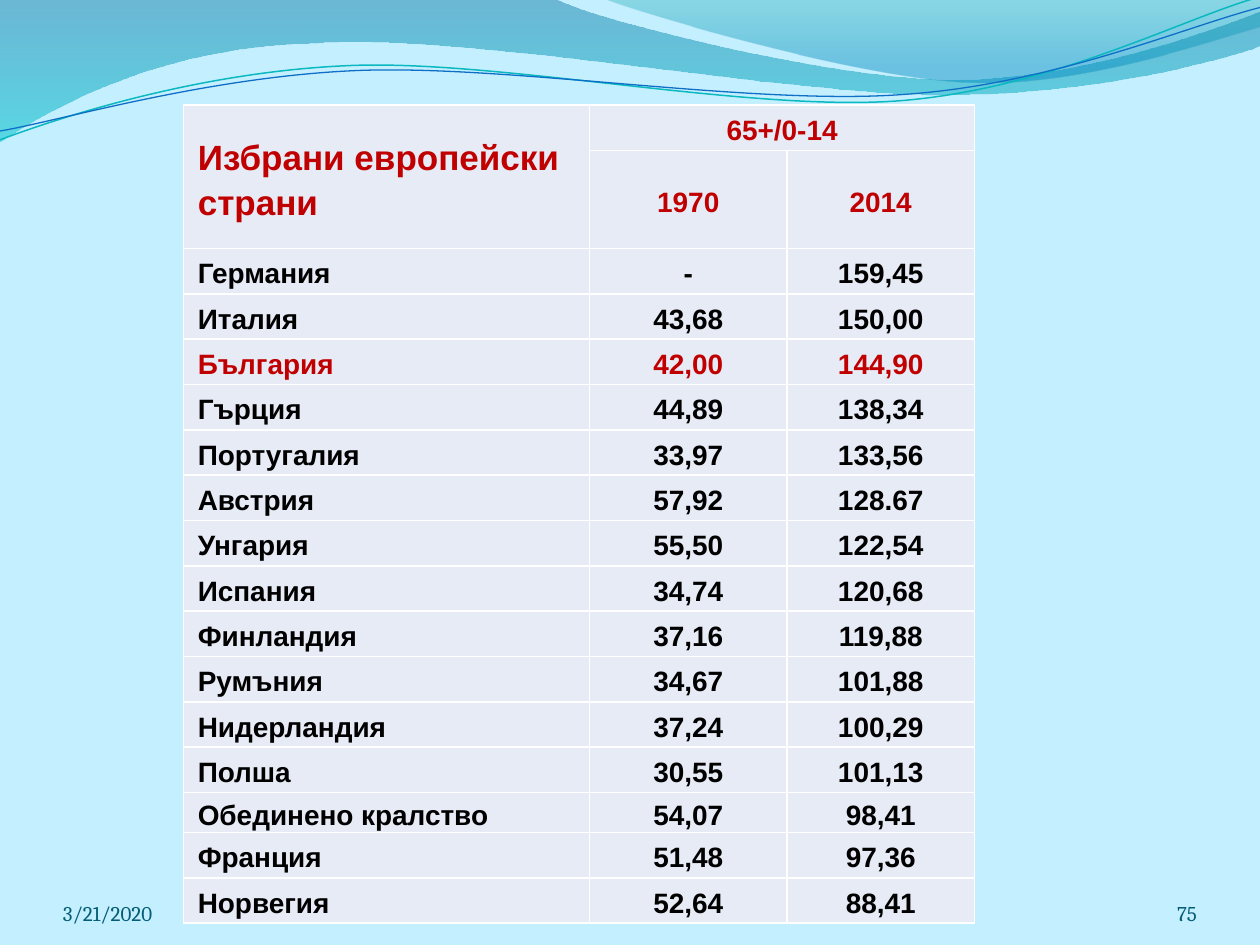
import pptx
import pptx.dml.color
import pptx.enum.text
import pptx.oxml
import pptx.oxml.ns
import pptx.util

RGBColor = pptx.dml.color.RGBColor
ALIGN = pptx.enum.text.PP_ALIGN
ANCHOR = pptx.enum.text.MSO_ANCHOR
Pt = pptx.util.Pt
qn = pptx.oxml.ns.qn
NS = pptx.oxml.ns.nsdecls("a")

SKY = RGBColor(0xC4, 0xEF, 0xFF)
DEEP_BLUE = RGBColor(0x00, 0x74, 0xA1)
AQUA = RGBColor(0x00, 0xC6, 0xCF)
TEAL = RGBColor(0x00, 0xA1, 0xA9)
BLUE = RGBColor(0x00, 0x8B, 0xBF)
LINE_TEAL = RGBColor(0x0A, 0xB8, 0xBF)
LINE_BLUE = RGBColor(0x0F, 0x6F, 0xC6)
FOOTER = RGBColor(0x04, 0x5D, 0x75)
CELL = RGBColor(0xE7, 0xEB, 0xF5)
RED = RGBColor(0xC0, 0x00, 0x00)
BLACK = RGBColor(0x00, 0x00, 0x00)

COLUMNS, ROWS = 100, 75
CURVE_TILT = 357.3

LEFT_WAVE = [
    [(0, 0)], [(44, -0.1)],
    [(47.6, 1.7), (66.4, 6.3), (75.8, 6.3)],
    [(85.3, 6.3), (95.8, 2.6), (100, 0.9)],
    [(100.1, 3.6)],
    [(98.3, 4.4), (87, 7.6), (74.6, 7.5)],
    [(62.2, 7.5), (38.2, 2.8), (25.7, 3.4)],
    [(12.9, 3.6), (4.6, 8.3), (-0.1, 11.3)],
    [(0, 0)],
]
RIGHT_WAVE = [
    [(47.9, -0.1)],
    [(50.9, 1.1), (68.2, 6.2), (76.9, 6.5)],
    [(85.6, 6.9), (96.1, 3.2), (100, 2.1)],
    [(100, 0)],
    [(47.9, -0.1)],
]
TEAL_LINE = [
    [(-0.2, 8.74)],
    [(4.68, 7.17), (15.84, 4.09), (27.75, 4.16)],
    [(39.56, 4.21), (59.14, 9.34), (71.17, 9.01)],
    [(83.2, 8.67), (93.95, 3.57), (100.03, 2.16)],
]
BLUE_LINE = [
    [(-0.16, 8.04)],
    [(4.58, 7.47), (16.43, 4.52), (28.34, 4.58)],
    [(40.35, 4.65), (59.57, 8.86), (71.6, 8.52)],
    [(83.53, 8.28), (94.23, 4.18), (100.19, 2.96)],
]

HIGHLIGHT = "България"
COUNTRIES = [
    ("Германия", "-", "159,45"),
    ("Италия", "43,68", "150,00"),
    (HIGHLIGHT, "42,00", "144,90"),
    ("Гърция", "44,89", "138,34"),
    ("Португалия", "33,97", "133,56"),
    ("Австрия", "57,92", "128.67"),
    ("Унгария", "55,50", "122,54"),
    ("Испания", "34,74", "120,68"),
    ("Финландия", "37,16", "119,88"),
    ("Румъния", "34,67", "101,88"),
    ("Нидерландия", "37,24", "100,29"),
    ("Полша", "30,55", "101,13"),
    ("Обединено кралство", "54,07", "98,41"),
    ("Франция", "51,48", "97,36"),
    ("Норвегия", "52,64", "88,41"),
]
HEADER = [("Избрани европейски страни", "65+/0-14", ""), ("", "1970", "2014")]


class Deck:
    """Holds the presentation, its grid and the current slide."""

    def __init__(self):
        self.prs = pptx.Presentation()
        self.prs.slide_width = pptx.util.Inches(10)
        self.prs.slide_height = pptx.util.Inches(7.5)
        self.s = self.prs.slides.add_slide(self.prs.slide_layouts[6])
        self.s.background.fill.solid()
        self.s.background.fill.fore_color.rgb = SKY

    def x(self, columns):
        return round(self.prs.slide_width * columns / COLUMNS)

    def y(self, rows):
        return round(self.prs.slide_height * rows / ROWS)

    def outline(self, segments, closed):
        segments = [[(self.x(px), self.y(py)) for px, py in seg] for seg in segments]
        builder = self.s.shapes.build_freeform(*segments[0][0], scale=1.0)
        builder.add_line_segments([seg[-1] for seg in segments[1:]], close=closed)
        sp = builder.convert_to_shape()
        sp.shadow.inherit = False
        lines = list(sp._element.iter(qn("a:lnTo")))
        for line, seg in zip(lines, segments[1:]):
            if len(seg) == 3:
                points = "".join(f'<a:pt x="{px - sp.left}" y="{py - sp.top}"/>'
                                 for px, py in seg)
                line.getparent().replace(line, pptx.oxml.parse_xml(
                    f"<a:cubicBezTo {NS}>{points}</a:cubicBezTo>"))
        return sp

    def wave(self, segments, *stops):
        sp = self.outline(segments, True)
        sp.line.fill.background()
        sp.fill.gradient()
        sp.fill.gradient_angle = 270
        for stop, (position, color, opacity) in zip(sp.fill.gradient_stops, stops):
            stop.position = position
            stop.color.rgb = color
            stop._gs.find(qn("a:srgbClr")).append(pptx.oxml.parse_xml(
                f'<a:alpha {NS} val="{opacity * 1000}"/>'))

    def curve(self, segments, color, width):
        sp = self.outline(segments, False)
        sp.rotation = CURVE_TILT
        sp.fill.background()
        sp.line.color.rgb = color
        sp.line.width = Pt(width)

    def run(self, p, text, font, size, color, bold=False):
        r = p.add_run()
        r.text = text
        r.font.name = font
        r.font.size = Pt(size)
        r.font.bold = bold
        r.font.color.rgb = color

    def footer(self, text, left, width, align):
        box = self.s.shapes.add_textbox(self.x(left), self.y(69.5), self.x(width), self.y(4))
        tf = box.text_frame
        tf.word_wrap = True
        tf.margin_left = tf.margin_right = tf.margin_top = tf.margin_bottom = 0
        tf.vertical_anchor = ANCHOR.BOTTOM
        tf.paragraphs[0].alignment = align
        self.run(tf.paragraphs[0], text, "Cambria", 12, FOOTER)

    def cell(self, cell, text, size, color, first):
        tc_pr = cell._tc.get_or_add_tcPr()
        for side in "LRTB":
            tc_pr.append(pptx.oxml.parse_xml(
                f'<a:ln{side} {NS} w="{Pt(1)}"><a:solidFill>'
                f'<a:srgbClr val="FFFFFF"/></a:solidFill></a:ln{side}>'))
        cell.fill.solid()
        cell.fill.fore_color.rgb = CELL
        cell.vertical_anchor = ANCHOR.MIDDLE
        cell.margin_left = cell.margin_right = self.x(0.4)
        cell.margin_top = self.y(0.1)
        cell.margin_bottom = 0
        if text:
            p = cell.text_frame.paragraphs[0]
            p.alignment = ALIGN.LEFT if first else ALIGN.CENTER
            p.line_spacing = 1.15
            p.space_after = Pt(10)
            if first:
                p._p.get_or_add_pPr().set("marL", str(self.x(0.75)))
            self.run(p, text, "Arial", size, color, True)

    def table(self, header, body, left, top, widths, height, short):
        rows = header + body
        frame = self.s.shapes.add_table(len(rows), len(widths), self.x(left), self.y(top),
                                        self.x(sum(widths)), self.y(height * len(rows)))
        tbl = frame.table
        tbl.first_row = tbl.horz_banding = False
        for column, width in zip(tbl.columns, widths):
            column.width = self.x(width)
        for i, values in enumerate(rows):
            tbl.rows[i].height = self.y(short.get(values[0], height))
            color = RED if i < len(header) or values[0] == HIGHLIGHT else BLACK
            for j, text in enumerate(values):
                size = 20 if i == j == 0 else 16
                self.cell(tbl.cell(i, j), text, size, color, j == 0)
        tbl.cell(0, 0).merge(tbl.cell(1, 0))
        tbl.cell(0, 1).merge(tbl.cell(0, 2))


def main():
    deck = Deck()
    deck.wave(LEFT_WAVE, (0, DEEP_BLUE, 45), (1, AQUA, 55))
    deck.wave(RIGHT_WAVE, (0, TEAL, 30), (0.8, BLUE, 45))
    deck.curve(TEAL_LINE, LINE_TEAL, 0.85)
    deck.curve(BLUE_LINE, LINE_BLUE, 0.75)
    deck.footer("3/21/2020", 5, 23.3, ALIGN.LEFT)
    deck.footer("75", 86.7, 8.3, ALIGN.RIGHT)
    deck.table(HEADER, COUNTRIES, 14.55, 8.35, (32.25, 15.65, 14.9), 3.6,
               {"Обединено кралство": 2.4})
    deck.prs.save("out.pptx")


if __name__ == "__main__":
    main()
